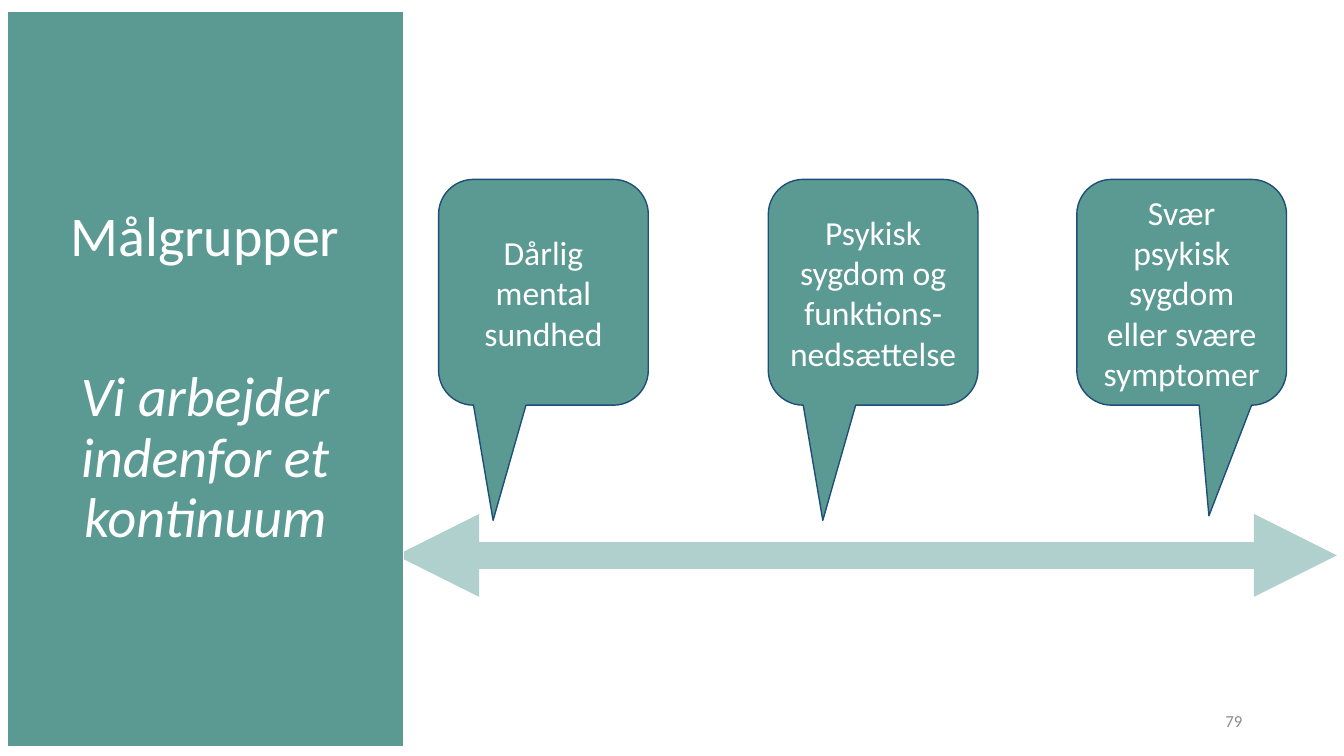
from pptx import Presentation
from pptx.dml.color import RGBColor
from pptx.enum.shapes import MSO_CONNECTOR, MSO_SHAPE
from pptx.enum.text import MSO_ANCHOR, MSO_AUTO_SIZE, PP_ALIGN
from pptx.oxml.ns import qn
from pptx.util import Inches, Pt
from lxml.etree import SubElement

COLORS = {
    "teal": "5B9993",
    "pale_teal": "B0D0CD",
    "navy": "1F4E79",
    "white": "FFFFFF",
    "grey": "8C8C8C",
}
FONT = "Calibri"

CALLOUT_TOP, CALLOUT_WIDTH, CALLOUT_HEIGHT = 1.78, 2.08, 2.24
# Text, left edge, pointer offset from the centre (share of width, height)
TARGET_GROUPS = [
    ("Dårlig mental sundhed", 4.35, (-0.24, 1.01)),
    ("Psykisk sygdom og funktions-nedsættelse", 7.62, (-0.24, 1.01)),
    ("Svær psykisk sygdom eller svære symptomer", 10.68, (0.13, 0.99)),
]


def rgb(name):
    return RGBColor.from_string(COLORS[name])


def paint(sp, fill, line):
    sp.fill.solid()
    sp.fill.fore_color.rgb = rgb(fill)
    sp.line.color.rgb = rgb(line)
    sp.line.width = Pt(1)


def format_text(tf, size, color, align):
    tf.word_wrap = True
    tf.auto_size = MSO_AUTO_SIZE.NONE
    tf.vertical_anchor = MSO_ANCHOR.MIDDLE
    for p in tf.paragraphs:
        p.alignment = align
        for r in p.runs:
            r.font.name = FONT
            r.font.size = Pt(size)
            r.font.color.rgb = rgb(color)


def add_title_panel(s, heading, subheading):
    """Turn the title placeholder into the filled panel on the left."""
    title = s.shapes.title
    title.left, title.top = Inches(0.07), Inches(0.11)
    title.width, title.height = Inches(3.93), Inches(7.3)
    paint(title, "teal", "white")
    tf = title.text_frame
    tf.margin_left = tf.margin_right = Inches(0.04)
    tf.margin_top = tf.margin_bottom = Inches(0.04)
    tf.text = heading
    p = tf.add_paragraph()
    p.text = subheading
    p.runs[0].font.italic = True
    format_text(tf, 40, "white", PP_ALIGN.CENTER)
    for paragraph in tf.paragraphs:
        paragraph.line_spacing = 0.9
        paragraph.space_before = Pt(0)
    p.space_before = Pt(71)
    # The panel lies over the left tip of the arrow
    s.shapes.element.append(title.element)


def add_continuum_arrow(s, left, right, y):
    line = s.shapes.add_connector(
        MSO_CONNECTOR.STRAIGHT, Inches(left), Inches(y), Inches(right), Inches(y)
    )
    line.line.color.rgb = rgb("pale_teal")
    line.line.width = Pt(19.75)
    ln = line.line._get_or_add_ln()
    for end in ("a:headEnd", "a:tailEnd"):
        SubElement(ln, qn(end), type="triangle")
    SubElement(line.element.spPr, qn("a:effectLst"))


def add_callout(s, text, left, pointer):
    sp = s.shapes.add_shape(
        MSO_SHAPE.ROUNDED_RECTANGULAR_CALLOUT,
        Inches(left), Inches(CALLOUT_TOP),
        Inches(CALLOUT_WIDTH), Inches(CALLOUT_HEIGHT),
    )
    sp.shadow.inherit = False
    sp.adjustments[0], sp.adjustments[1] = pointer
    paint(sp, "teal", "navy")
    sp.text_frame.text = text
    format_text(sp.text_frame, 24, "white", PP_ALIGN.CENTER)


def add_page_number(s, number):
    box = s.shapes.add_textbox(Inches(9.42), Inches(6.95), Inches(3), Inches(0.4))
    box.text_frame.text = number
    format_text(box.text_frame, 12, "grey", PP_ALIGN.RIGHT)


def main():
    prs = Presentation()
    prs.slide_width, prs.slide_height = Inches(13.33), Inches(7.5)
    s = prs.slides.add_slide(prs.slide_layouts[5])
    add_page_number(s, "79")
    add_continuum_arrow(s, 3.93, 13.26, 5.51)
    for text, left, pointer in TARGET_GROUPS:
        add_callout(s, text, left, pointer)
    add_title_panel(s, "Målgrupper", "Vi arbejder indenfor et kontinuum")
    prs.save("out.pptx")


if __name__ == "__main__":
    main()
